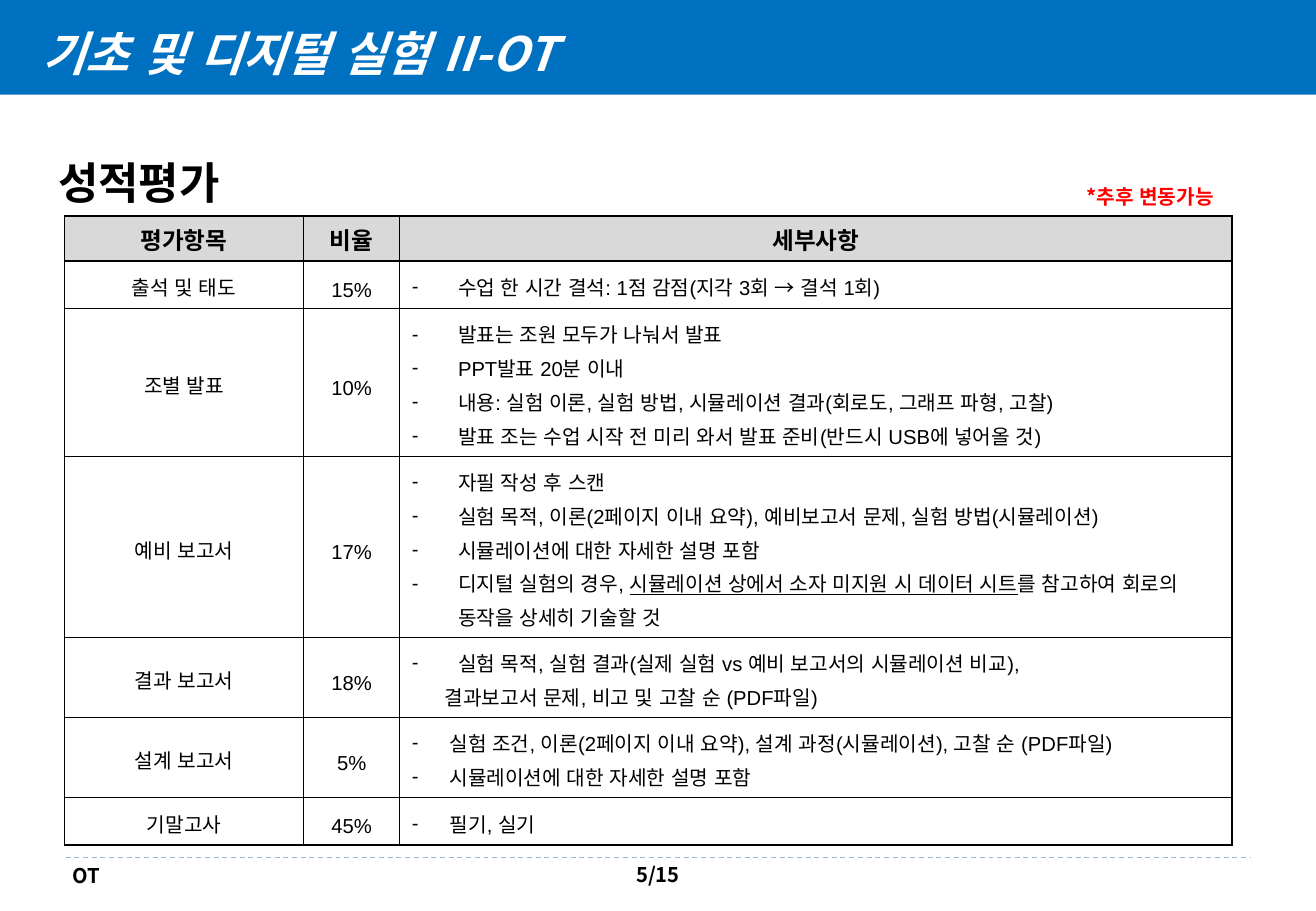
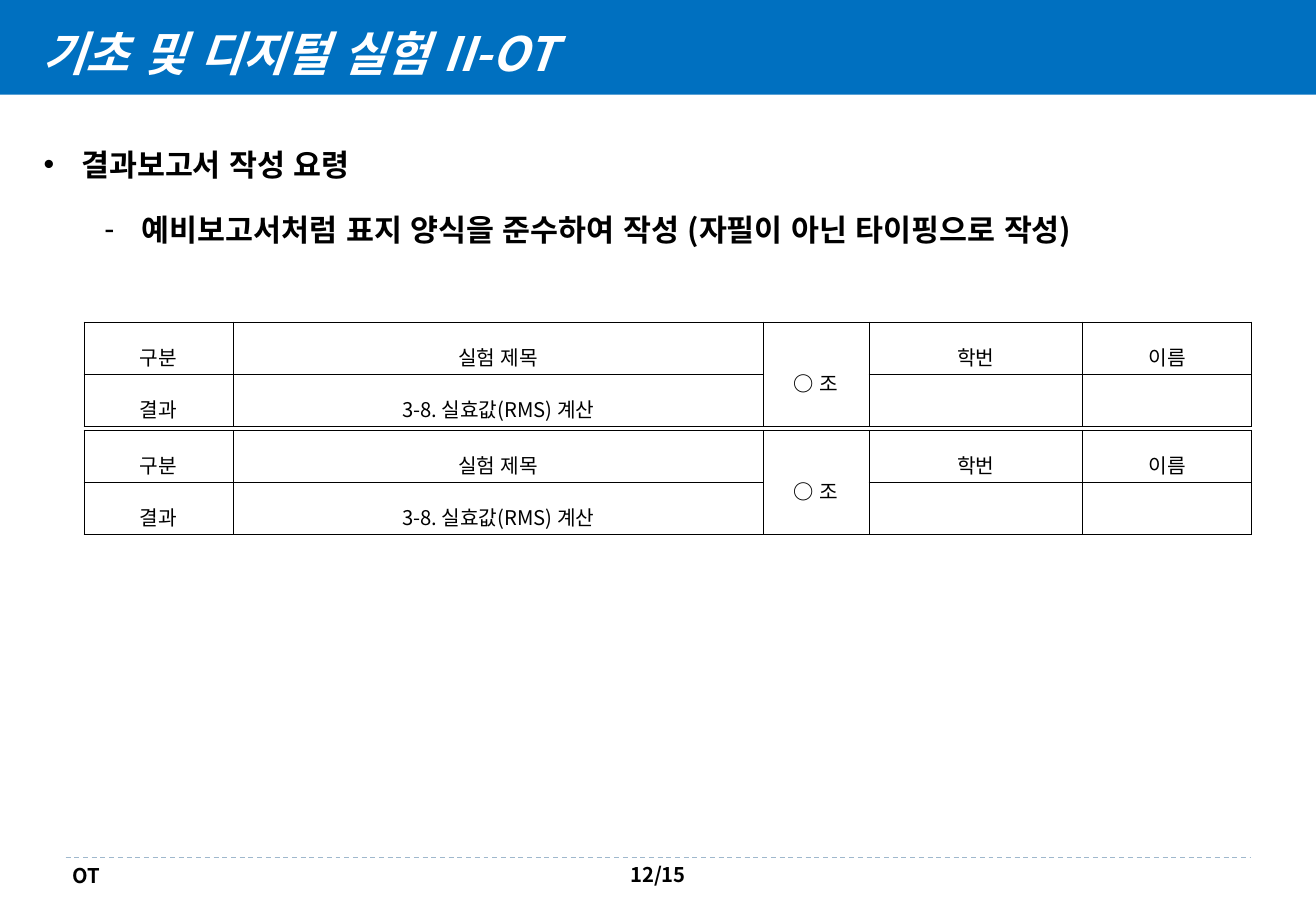
import pptx
import pptx.util
import pptx.dml.color
import pptx.enum.text
import pptx.enum.dml
import pptx.enum.shapes
import pptx.enum.lang
import pptx.oxml.ns
import lxml.etree

Inches, Pt = pptx.util.Inches, pptx.util.Pt
ALIGN = pptx.enum.text.PP_ALIGN
ANCHOR = pptx.enum.text.MSO_ANCHOR
qn = pptx.oxml.ns.qn

# Content
HEAD = "기초 및 디지털 실험 II-OT"
FOOT = "OT"
TOTAL = 15
GRADE_PAGE, REPORT_PAGE = 5, 12
GRADE_HEAD = "성적평가"
NOTE = "*추후 변동가능"
FIELDS = ["평가항목", "비율", "세부사항"]
# item, share, text indent, bullet lines; _ marks underlined words
GRADES = [
    ("출석 및 태도", "15%", 0.38, ["수업 한 시간 결석: 1점 감점(지각 3회 → 결석 1회)"]),
    ("조별 발표", "10%", 0.38, [
        "발표는 조원 모두가 나눠서 발표",
        "PPT발표 20분 이내",
        "내용: 실험 이론, 실험 방법, 시뮬레이션 결과(회로도, 그래프 파형, 고찰)",
        "발표 조는 수업 시작 전 미리 와서 발표 준비(반드시 USB에 넣어올 것)"]),
    ("예비 보고서", "17%", 0.38, [
        "자필 작성 후 스캔",
        "실험 목적, 이론(2페이지 이내 요약), 예비보고서 문제, 실험 방법(시뮬레이션)",
        "시뮬레이션에 대한 자세한 설명 포함",
        "디지털 실험의 경우, _시뮬레이션 상에서 소자 미지원 시 데이터 시트_"
        "를 참고하여 회로의 동작을 상세히 기술할 것"]),
    ("결과 보고서", "18%", 0.38, [
        "실험 목적, 실험 결과(실제 실험 vs 예비 보고서의 시뮬레이션 비교),",
        "결과보고서 문제, 비고 및 고찰 순 (PDF파일)"]),
    ("설계 보고서", "5%", 0.31, [
        "실험 조건, 이론(2페이지 이내 요약), 설계 과정(시뮬레이션), 고찰 순 (PDF파일)",
        "시뮬레이션에 대한 자세한 설명 포함"]),
    ("기말고사", "45%", 0.31, ["필기, 실기"]),
]
PLAIN = GRADES[3][3][1]  # the one line without a bullet
GRADE_COLS = [1.97, 0.79, 6.85]
GRADE_ROWS = [0.37, 0.39, 1.22, 1.49, 0.65, 0.66, 0.39]

GUIDE = "결과보고서 작성 요령"
RULE = "예비보고서처럼 표지 양식을 준수하여 작성 (자필이 아닌 타이핑으로 작성)"
COVER = [["구분", "실험 제목", "_○ _조", "학번", "이름"],
         ["결과", "3-8. 실효값(RMS) 계산", "", "", ""]]
COVER_COLS = [1.23, 4.36, 0.87, 1.76, 1.39]
COVER_ROWS = [0.43, 0.43]
COVER_TOPS = [2.65, 3.54]

# Shared look
HEX = {"band": "0070C0", "rule": "9FB8CD", "grey": "D9D9D9",
       "ink": "000000", "white": "FFFFFF", "red": "FF0000"}
FACE = "Noto Sans CJK KR"
BOLD = {"bold": True}
PAD = {"margin_left": Inches(0.07), "margin_right": Inches(0.07),
       "margin_top": Inches(0.02), "margin_bottom": Inches(0.02)}
MID = {"alignment": ALIGN.CENTER}
EXACT = {"line_spacing": Pt(20)}


def put(obj, vals):
    for key, val in vals.items():
        setattr(obj, key, val)


def tint(name):
    return pptx.dml.color.RGBColor.from_string(HEX[name])


def write(par, text, size, look=None, form=None, mark=None, face=FACE, ink="ink"):
    """Fill a paragraph; parts between underscores also take mark."""
    put(par, form or {})
    for i, part in enumerate(text.split("_")):
        if not part:
            continue
        run = par.add_run()
        run.text = part
        put(run.font, {"name": face, "size": Pt(size),
                       "language_id": pptx.enum.lang.MSO_LANGUAGE_ID.KOREAN,
                       **(look or {}), **(mark if mark and i % 2 else {})})
        run.font.color.rgb = tint(ink)
        east = lxml.etree.Element(qn("a:ea"), typeface=FACE)
        run.font._element.find(qn("a:latin")).addnext(east)


def bullet(par, char, left, hang):
    props = par._p.get_or_add_pPr()
    props.set("marL", str(Inches(left)))
    props.set("indent", str(-Inches(hang)))
    if char:
        lxml.etree.SubElement(props, qn("a:buFont"), typeface="Arial")
        lxml.etree.SubElement(props, qn("a:buChar"), char=char)


def label(slide, box, text, size, form=None, ink="ink", wrap=True):
    frame = slide.shapes.add_textbox(*map(Inches, box)).text_frame
    frame.word_wrap = wrap
    write(frame.paragraphs[0], text, size, BOLD, form, ink=ink)
    return frame


def grid(slide, left, top, cols, rows, width):
    """Add a plain table with black borders on every cell."""
    table = slide.shapes.add_table(len(rows), len(cols), Inches(left), Inches(top),
                                   Inches(sum(cols)), Inches(sum(rows))).table
    put(table, {"first_row": False, "horz_banding": False})
    for parts, sizes, key in ((table.columns, cols, "width"), (table.rows, rows, "height")):
        for part, size in zip(parts, sizes):
            setattr(part, key, Inches(size))
    for cell in table.iter_cells():
        cell.vertical_anchor = ANCHOR.MIDDLE
        cell.fill.background()
        props = cell._tc.get_or_add_tcPr()
        for i, side in enumerate("LRTB"):
            edge = lxml.etree.Element(qn("a:ln" + side), w=str(Pt(width)))
            fill = lxml.etree.SubElement(edge, qn("a:solidFill"))
            lxml.etree.SubElement(fill, qn("a:srgbClr"), val=HEX["ink"])
            props.insert(i, edge)
    return table


def dress(slide, layout):
    """Draw band, rule and footer, then hand them to the layout."""
    band = slide.shapes.add_shape(pptx.enum.shapes.MSO_SHAPE.RECTANGLE, 0, 0,
                                  Inches(10.83), Inches(0.78))
    band.shadow.inherit = False
    band.fill.solid()
    band.fill.fore_color.rgb = tint("band")
    band.line.fill.background()
    rule = slide.shapes.add_connector(pptx.enum.shapes.MSO_CONNECTOR.STRAIGHT,
                                      *map(Inches, (0.54, 7.06, 10.29, 7.06)))
    put(rule.line, {"width": Pt(0.75), "dash_style": pptx.enum.dml.MSO_LINE.DASH})
    rule.line.color.rgb = tint("rule")
    lxml.etree.SubElement(rule._element.spPr, qn("a:effectLst"))
    label(slide, (0.5, 7.06, 2.79, 0.3), FOOT, 12)
    for shape in list(slide.shapes)[-3:]:
        layout.shapes._spTree.append(shape._element)


def start(deck, page):
    layout = deck.slide_layouts[5]
    slide = deck.slides.add_slide(layout)
    if len(deck.slides) == 1:
        dress(slide, layout)
    title = slide.shapes.title
    put(title, dict(zip(("left", "top", "width", "height"),
                        map(Inches, (0.25, 0.17, 9.39, 0.55)))))
    put(title.text_frame, {"vertical_anchor": ANCHOR.BOTTOM, "word_wrap": True,
                           "auto_size": pptx.enum.text.MSO_AUTO_SIZE.NONE})
    write(title.text_frame.paragraphs[0], HEAD, 28, {"bold": True, "italic": True},
          {"alignment": ALIGN.LEFT}, ink="white")
    label(slide, (5.02, 7.05, 0.79, 0.31), f"{page}/{TOTAL}", 12, MID)
    return slide


def grades(deck):
    slide = start(deck, GRADE_PAGE)
    label(slide, (0.38, 1.23, 1.66, 0.54), GRADE_HEAD, 26, wrap=False)
    label(slide, (8.84, 1.47, 1.62, 0.3), NOTE, 12, ink="red")
    table = grid(slide, 0.53, 1.78, GRADE_COLS, GRADE_ROWS, 1)
    for i, text in enumerate(FIELDS):
        cell = table.cell(0, i)
        cell.fill.solid()
        cell.fill.fore_color.rgb = tint("grey")
        write(cell.text_frame.paragraphs[0], text, 14, BOLD, MID, face="Arial")
    for i, (item, share, left, lines) in enumerate(GRADES, 1):
        for j, text in enumerate((item, share)):
            write(table.cell(i, j).text_frame.paragraphs[0], text, 12,
                  form={**MID, **EXACT}, face="Arial")
        frame = table.cell(i, 2).text_frame
        for j, text in enumerate(lines):
            par = frame.add_paragraph() if j else frame.paragraphs[0]
            write(par, text, 12, form=EXACT, mark={"underline": True}, face="Arial")
            if text == PLAIN:
                bullet(par, None, 0.27, 0)
            else:
                bullet(par, "-", left, left)


def report(deck):
    slide = start(deck, REPORT_PAGE)
    frame = label(slide, (0.26, 1.15, 9.41, 1.01), GUIDE, 18)
    bullet(frame.paragraphs[0], "•", 0.31, 0.31)
    par = frame.add_paragraph()
    write(par, RULE, 18, BOLD, {"level": 1, "space_before": Pt(17)})
    bullet(par, "-", 0.81, 0.31)
    for top in COVER_TOPS:
        table = grid(slide, 0.69, top, COVER_COLS, COVER_ROWS, 0.28)
        for i, row in enumerate(COVER):
            for j, text in enumerate(row):
                cell = table.cell(i, j)
                put(cell, PAD)
                write(cell.text_frame.paragraphs[0], text, 12,
                      form={**MID, "line_spacing": 1.6}, mark=BOLD)
        table.cell(0, 2).merge(table.cell(1, 2))


def main():
    deck = pptx.Presentation()
    put(deck, {"slide_width": Inches(10.83), "slide_height": Inches(7.5)})
    grades(deck)
    report(deck)
    deck.save("out.pptx")


if __name__ == "__main__":
    main()
